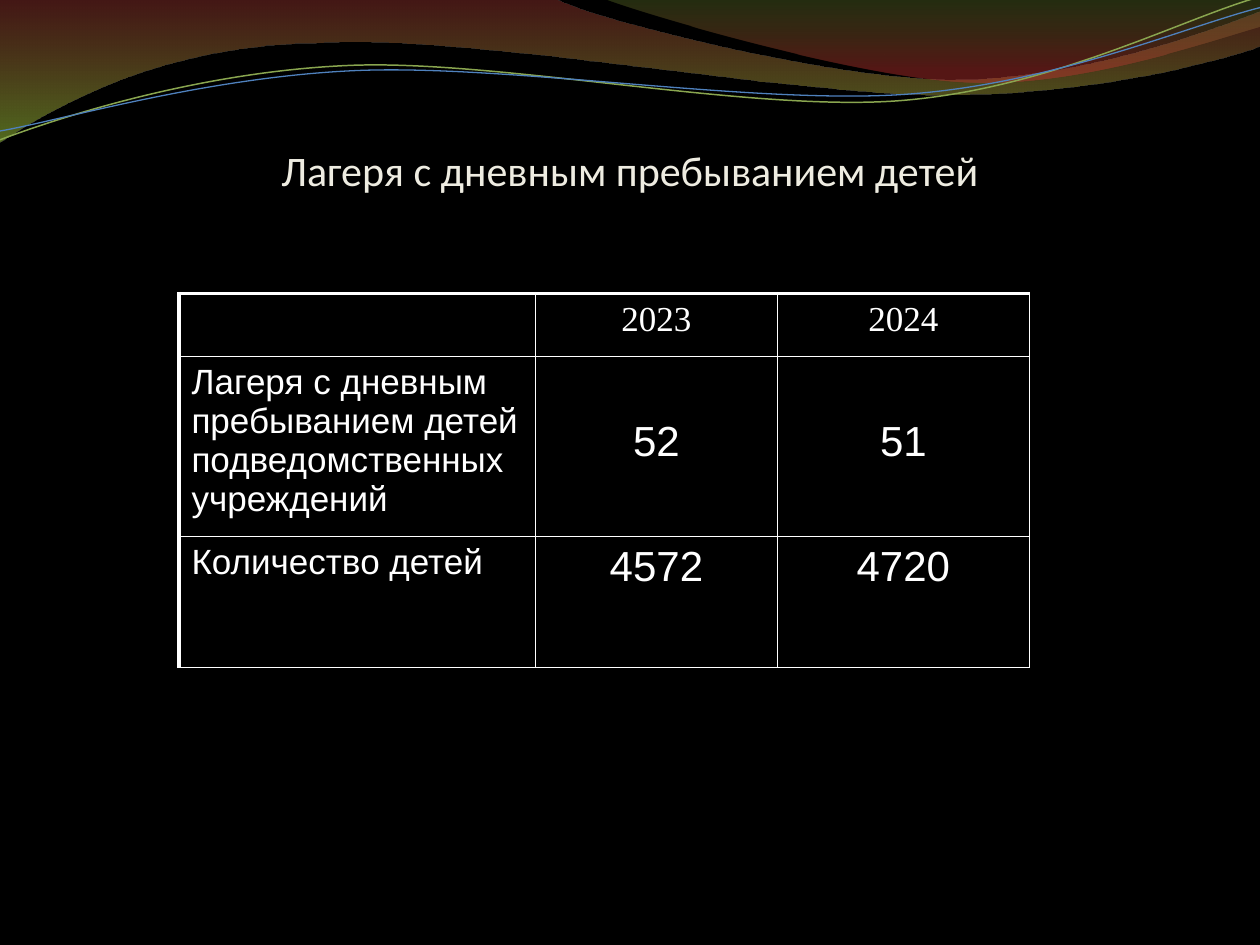
from dataclasses import dataclass
from math import cos, radians, sin
from typing import Optional

from lxml import etree
from pptx import Presentation
from pptx.dml.color import RGBColor
from pptx.enum.text import MSO_ANCHOR, MSO_AUTO_SIZE, PP_ALIGN
from pptx.oxml.ns import qn
from pptx.util import Emu, Inches, Pt

CENTER, LEFT = PP_ALIGN.CENTER, PP_ALIGN.LEFT
TOP, MIDDLE, BOTTOM = MSO_ANCHOR.TOP, MSO_ANCHOR.MIDDLE, MSO_ANCHOR.BOTTOM
NO_AUTOFIT = MSO_AUTO_SIZE.NONE

COLORS = {
    "background": "000000",
    "title": "EEECE1",
    "table": "FFFFFF",
    "maroon": "973330",
    "lime": "95C238",
    "olive": "769537",
    "red": "BE3330",
    "green line": "89A54F",
    "blue line": "4F81BD",
}
SLIDE_W, SLIDE_H = Inches(10), Inches(7.5)
LINE_TILT = -2.7
THIN, THICK = 1, 2.25


@dataclass(frozen=True)
class Stop:
    position: int
    color: str
    opacity: int


@dataclass(frozen=True)
class Wave:
    box: tuple[float, float, float, float]
    start: tuple[float, float]
    segments: tuple[tuple[float, ...], ...]
    stops: tuple[Stop, ...] = ()
    line_color: Optional[str] = None
    line_width: float = 0
    tilt: float = 0


@dataclass(frozen=True)
class Entry:
    text: str
    size: int = 20
    font: str = "Arial"
    align: PP_ALIGN = CENTER
    anchor: MSO_ANCHOR = TOP
    bottom_margin: float = 0.05


WAVES = (
    Wave((-0.01, -0.01, 10.02, 1.14), (0, -0.01), (
        (4.4, -0.01),
        (4.76, 0.17, 6.64, 0.63, 7.58, 0.63),
        (8.53, 0.63, 9.58, 0.26, 10, 0.09),
        (10.01, 0.36),
        (9.83, 0.44, 8.7, 0.76, 7.46, 0.75),
        (6.22, 0.75, 3.82, 0.28, 2.57, 0.34),
        (1.29, 0.35, 0.46, 0.83, -0.01, 1.13),
        (0, -0.01),
    ), stops=(Stop(0, "maroon", 45), Stop(100, "lime", 55))),
    Wave((4.79, -0.01, 5.21, 0.7), (4.79, -0.01), (
        (5.09, 0.11, 6.82, 0.62, 7.69, 0.65),
        (8.56, 0.69, 9.61, 0.32, 10, 0.21),
        (10, 0),
        (4.79, -0.01),
    ), stops=(Stop(0, "olive", 30), Stop(80, "red", 45))),
    Wave((-0.02, 0.22, 10.02, 0.71), (0, 1.11), (
        (0.48, 0.93, 1.58, 0.57, 2.77, 0.52),
        (3.95, 0.47, 5.93, 0.89, 7.13, 0.8),
        (8.33, 0.71, 9.38, 0.15, 9.98, -0.02),
    ), line_color="green line", line_width=0.85, tilt=LINE_TILT),
    Wave((-0.02, 0.3, 10.03, 0.58), (0, 1.04), (
        (0.47, 0.96, 1.64, 0.61, 2.83, 0.56),
        (4.03, 0.51, 5.97, 0.83, 7.17, 0.75),
        (8.36, 0.67, 9.41, 0.21, 10, 0.06),
    ), line_color="blue line", line_width=0.75, tilt=LINE_TILT),
)

COLUMN_WIDTHS = (2.83, 1.92, 2)
ROW_HEIGHTS = (0.5, 1.43, 1.04)
CAMP_ROWS = (
    (None,
     Entry("2023", font="Times New Roman"),
     Entry("2024", font="Times New Roman")),
    (Entry("Лагеря с дневным пребыванием детей подведомственных учреждений", align=LEFT),
     Entry("52", 24, anchor=MIDDLE, bottom_margin=0.13),
     Entry("51", 24, anchor=MIDDLE, bottom_margin=0.13)),
    (Entry("Количество детей", align=LEFT),
     Entry("4572", 24),
     Entry("4720", 24)),
)


def rgb(name: str) -> RGBColor:
    return RGBColor.from_string(COLORS[name])


def add_color(parent, name: str):
    return etree.SubElement(parent, qn("a:srgbClr"), val=COLORS[name])


def local_point(wave: Wave, x: float, y: float) -> tuple[int, int]:
    left, top, width, height = wave.box
    dx, dy = x - left - width / 2, y - top - height / 2
    angle = radians(-wave.tilt)
    return (Inches(dx * cos(angle) - dy * sin(angle) + width / 2),
            Inches(dx * sin(angle) + dy * cos(angle) + height / 2))


def add_step(outline, tag: str, wave: Wave, numbers: tuple) -> None:
    step = etree.SubElement(outline, qn(tag))
    for x, y in zip(numbers[::2], numbers[1::2]):
        px, py = local_point(wave, x, y)
        etree.SubElement(step, qn("a:pt"), x=str(px), y=str(py))


def curve_outline(shape, wave: Wave) -> None:
    outline = next(shape._element.iter(qn("a:path")))
    for step in list(outline):
        outline.remove(step)
    outline.set("w", str(Inches(wave.box[2])))
    outline.set("h", str(Inches(wave.box[3])))
    add_step(outline, "a:moveTo", wave, wave.start)
    for segment in wave.segments:
        add_step(outline, "a:lnTo" if len(segment) == 2 else "a:cubicBezTo", wave, segment)
    if wave.stops:
        etree.SubElement(outline, qn("a:close"))


def fill_gradient(shape, stops: tuple[Stop, ...]) -> None:
    gradient = etree.Element(qn("a:gradFill"), rotWithShape="1")
    stop_list = etree.SubElement(gradient, qn("a:gsLst"))
    for stop in stops:
        mark = etree.SubElement(stop_list, qn("a:gs"), pos=str(stop.position * 1000))
        etree.SubElement(add_color(mark, stop.color), qn("a:alpha"), val=str(stop.opacity * 1000))
    etree.SubElement(gradient, qn("a:lin"), ang="5400000", scaled="1")
    shape._element.spPr.find(qn("a:custGeom")).addnext(gradient)


def draw_wave(slide, wave: Wave) -> None:
    builder = slide.shapes.build_freeform(*map(Inches, wave.start), scale=1.0)
    builder.add_line_segments([tuple(map(Inches, s[-2:])) for s in wave.segments], close=False)
    shape = builder.convert_to_shape()
    shape.left, shape.top, shape.width, shape.height = map(Inches, wave.box)
    shape.rotation = wave.tilt
    curve_outline(shape, wave)
    shape.shadow.inherit = False
    if wave.stops:
        fill_gradient(shape, wave.stops)
        shape.line.fill.background()
    else:
        shape.fill.background()
        shape.line.color.rgb = rgb(wave.line_color)
        shape.line.width = Pt(wave.line_width)


def write_run(paragraph, entry: Entry, color: str) -> None:
    paragraph.alignment = entry.align
    run = paragraph.add_run()
    run.text = entry.text
    run.font.size = Pt(entry.size)
    run.font.name = entry.font
    run.font.color.rgb = rgb(color)


def set_borders(cell, row: int, column: int) -> None:
    widths = {
        "a:lnL": THIN if column else THICK,
        "a:lnR": THIN,
        "a:lnT": THIN if row else THICK,
        "a:lnB": THIN,
    }
    properties = cell._tc.get_or_add_tcPr()
    for index, (side, width) in enumerate(widths.items()):
        border = etree.Element(qn(side), w=str(Pt(width)))
        add_color(etree.SubElement(border, qn("a:solidFill")), "table")
        properties.insert(index, border)


def draw_table(slide) -> None:
    frame = slide.shapes.add_table(
        len(ROW_HEIGHTS), len(COLUMN_WIDTHS), Inches(1.42), Inches(2.33),
        Inches(sum(COLUMN_WIDTHS)), Inches(sum(ROW_HEIGHTS)))
    table = frame.table
    table.first_row = table.horz_banding = False
    for column, width in zip(table.columns, COLUMN_WIDTHS):
        column.width = Inches(width)
    for r, (height, entries) in enumerate(zip(ROW_HEIGHTS, CAMP_ROWS)):
        table.rows[r].height = Inches(height)
        for c, entry in enumerate(entries):
            cell = table.cell(r, c)
            cell.fill.background()
            set_borders(cell, r, c)
            if entry:
                cell.vertical_anchor = entry.anchor
                cell.margin_bottom = Inches(entry.bottom_margin)
                write_run(cell.text_frame.paragraphs[0], entry, "table")


def set_title(slide) -> None:
    title = slide.shapes.title
    title.left, title.top = Emu(int(SLIDE_W * 0.05)), Emu(int(SLIDE_H * 0.04))
    title.width, title.height = Emu(int(SLIDE_W * 0.9)), Inches(1.25)
    frame = title.text_frame
    frame.auto_size = NO_AUTOFIT
    frame.word_wrap = True
    frame.vertical_anchor = BOTTOM
    frame.margin_left = frame.margin_right = frame.margin_bottom = 0
    frame.margin_top = Inches(0.05)
    write_run(frame.paragraphs[0], Entry("Лагеря с дневным пребыванием детей", 24, "Calibri"), "title")


def main() -> None:
    deck = Presentation()
    deck.slide_width, deck.slide_height = SLIDE_W, SLIDE_H
    slide = deck.slides.add_slide(deck.slide_layouts[5])
    slide.background.fill.solid()
    slide.background.fill.fore_color.rgb = rgb("background")
    for wave in WAVES:
        draw_wave(slide, wave)
    set_title(slide)
    draw_table(slide)
    deck.save("out.pptx")


if __name__ == "__main__":
    main()
